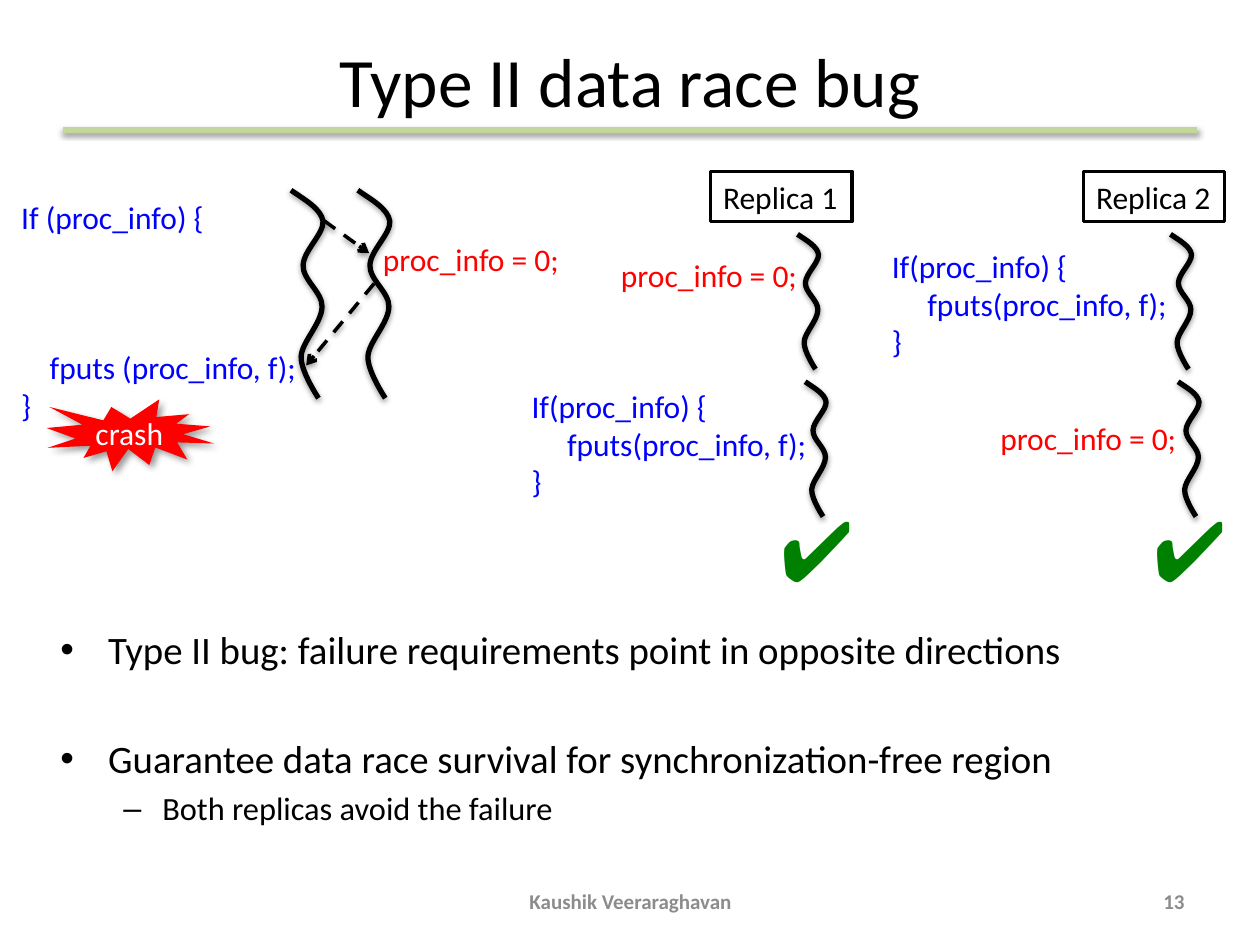
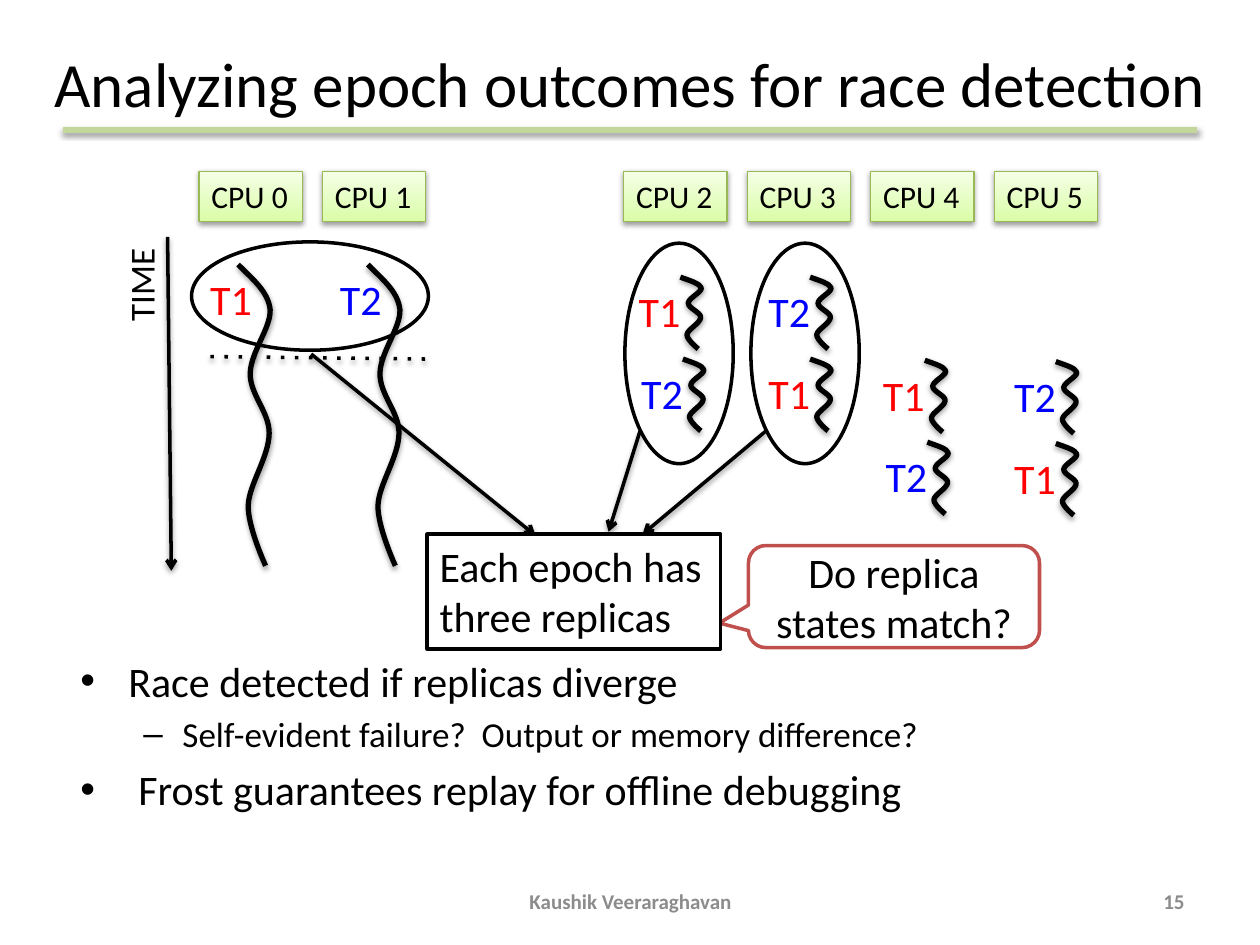
from lxml import etree
from pptx import Presentation
from pptx.dml.color import RGBColor
from pptx.enum import shapes, text
from pptx.oxml import ns
from pptx.util import Inches, Pt

COLORS = {
    "ink": "000000", "paper": "FFFFFF", "rule": "C3D69B", "footer": "8C8C8C",
    "red": "FF0000", "blue": "0000FF", "tick": "008000", "callout": "C0504D",
    "cpu_low": "DAFDA7", "cpu_high": "F5FFE7", "cpu_line": "98B955",
}
SOFT = {"alpha": 38, "blur": 3.1, "dist": 1.6, "angle": 90}
CRASH = {"alpha": 40, "blur": 4, "dist": 3, "angle": 45}
LABEL = {"word_wrap": False, "auto_size": text.MSO_AUTO_SIZE.SHAPE_TO_FIT_TEXT}
CENTERED = {"vertical_anchor": text.MSO_ANCHOR.MIDDLE, "word_wrap": True}
TOP = {"vertical_anchor": text.MSO_ANCHOR.TOP, "word_wrap": True}
LEFT, CENTER, RIGHT = text.PP_ALIGN.LEFT, text.PP_ALIGN.CENTER, text.PP_ALIGN.RIGHT
BULLETS = {0: ("•", 0.38, 0.38), 1: ("–", 0.81, 0.31)}
ASSIGNMENT = ["proc_info = 0;"]
GUARDED_CALL = ["If(proc_info) {", "     fputs(proc_info, f);", "}"]
WAVE = [
    (0.46, 0.05), (0.92, 0.09), (0.98, 0.15),
    (1, 0.21), (0.39, 0.29), (0.37, 0.36),
    (0.35, 0.43), (0.96, 0.49), (0.95, 0.56),
    (0.94, 0.64), (0.33, 0.73), (0.31, 0.8),
    (0.29, 0.87), (0.84, 1), (0.84, 1),
]


def rgb(name):
    return RGBColor.from_string(COLORS[name])


def apply(target, values):
    for name, value in values.items():
        setattr(target, name, value)


def box(left, top, width, height):
    return [Inches(side) for side in (left, top, width, height)]


def add_element(parent, tag, **attributes):
    element = etree.SubElement(parent, ns.qn(tag))
    for name, value in attributes.items():
        element.set(name, str(value))
    return element


def set_shadow(shape, shadow):
    properties = shape._element.spPr
    for old in properties.findall(ns.qn("a:effectLst")):
        properties.remove(old)
    effects = add_element(properties, "a:effectLst")
    if shadow:
        outer = add_element(
            effects, "a:outerShdw", blurRad=int(Pt(shadow["blur"])),
            dist=int(Pt(shadow["dist"])), dir=shadow["angle"] * 60000, rotWithShape=0)
        tint = add_element(outer, "a:srgbClr", val=COLORS["ink"])
        add_element(tint, "a:alpha", val=shadow["alpha"] * 1000)


def set_line(shape, color, width):
    shape.line.color.rgb = rgb(color)
    shape.line.width = Pt(width)


def write(frame, lines, size, color, align=LEFT, bold=False, font="Calibri", layout=LABEL):
    apply(frame, layout)
    for index, line in enumerate(lines):
        paragraph = frame.add_paragraph() if index else frame.paragraphs[0]
        paragraph.alignment = align
        run = paragraph.add_run()
        run.text = line
        apply(run.font, {"name": font, "size": Pt(size), "bold": bold})
        run.font.color.rgb = rgb(color)


def add_text(slide, place, lines, size, color, **options):
    label = slide.shapes.add_textbox(*box(*place))
    write(label.text_frame, lines, size, color, **options)
    return label


def add_shape(slide, kind, place, fill=None, line=None, width=2, shadow=None):
    shape = slide.shapes.add_shape(kind, *box(*place))
    if fill:
        shape.fill.solid()
        shape.fill.fore_color.rgb = rgb(fill)
    else:
        shape.fill.background()
    if line:
        set_line(shape, line, width)
    else:
        shape.line.fill.background()
    set_shadow(shape, shadow)
    return shape


def add_line(slide, start, end, color="ink", width=2, dash=None, arrow=False):
    ends = [Inches(value) for value in (*start, *end)]
    line = slide.shapes.add_connector(shapes.MSO_CONNECTOR.STRAIGHT, *ends)
    set_line(line, color, width)
    stroke = line.line._get_or_add_ln()
    if dash:
        add_element(stroke, "a:prstDash", val=dash)
    if arrow:
        add_element(stroke, "a:tailEnd", type="arrow")
    set_shadow(line, SOFT)


def bend_segments(freeform):
    outline = next(freeform._element.iter(ns.qn("a:path")))
    segments = outline.findall(ns.qn("a:lnTo"))
    for first in range(0, len(segments), 3):
        curve = add_element(outline, "a:cubicBezTo")
        for segment in segments[first:first + 3]:
            curve.append(segment[0])
            outline.remove(segment)


def add_wave(slide, left, top, width, height):
    builder = slide.shapes.build_freeform(Inches(left), Inches(top))
    builder.add_line_segments(
        [(Inches(left + x * width), Inches(top + y * height)) for x, y in WAVE], close=False)
    wave = builder.convert_to_shape()
    bend_segments(wave)
    wave.fill.background()
    set_line(wave, "ink", 3)
    set_shadow(wave, SOFT)


def add_bullets(slide, place, items):
    body = slide.shapes.add_textbox(*box(*place)).text_frame
    body.word_wrap = True
    for index, (level, line, size, before, extra) in enumerate(items):
        paragraph = body.add_paragraph() if index else body.paragraphs[0]
        mark, margin, hanging = BULLETS[level]
        properties = paragraph._p.get_or_add_pPr()
        properties.set("marL", str(Inches(margin + extra)))
        properties.set("indent", str(-Inches(hanging + extra)))
        add_element(properties, "a:buFont", typeface="Arial")
        add_element(properties, "a:buChar", char=mark)
        apply(paragraph, {"level": level, "space_before": Pt(before)})
        run = paragraph.add_run()
        run.text = line
        apply(run.font, {"name": "Calibri", "size": Pt(size)})
        run.font.color.rgb = rgb("ink")


def add_frame(deck, title, size, height, number):
    slide = deck.slides.add_slide(deck.slide_layouts[6])
    add_line(slide, (0.5, 1.03), (9.5, 1.03), color="rule", width=3.5)
    add_text(slide, (0, 0.3, 10, height), [title], size, "ink", align=CENTER, layout=CENTERED)
    for place, line, align in (((3.42, 6.95, 3.17, 0.4), "Kaushik Veeraraghavan", CENTER),
                               ((7.17, 6.95, 2.33, 0.4), number, RIGHT)):
        add_text(slide, place, [line], 12, "footer", align=align, bold=True, layout=CENTERED)
    return slide


def add_assignment(slide, left, top):
    add_text(slide, (left, top, 1.61, 0.4), ASSIGNMENT, 18, "red")


def add_replica(slide, name, left, assignment_at, call_at):
    add_assignment(slide, *assignment_at)
    add_text(slide, (*call_at, 2.41, 1.01), GUARDED_CALL, 18, "blue")
    header = add_shape(slide, shapes.MSO_SHAPE.RECTANGLE, (left, 1.36, 1.12, 0.4), "paper", "ink")
    write(header.text_frame, [name], 18, "ink")
    add_wave(slide, left + 0.69, 1.86, 0.17, 1.07)
    add_wave(slide, left + 0.75, 3.03, 0.17, 1.07)
    add_text(slide, (left + 0.46, 3.9, 0.77, 0.91), ["✔"], 48, "tick", font="Arial")


def add_cpu(slide, number, left):
    cpu = add_shape(slide, shapes.MSO_SHAPE.RECTANGLE, (left, 1.36, 0.82, 0.4),
                    "cpu_high", "cpu_line", 0.75, SOFT)
    cpu.fill.gradient()
    cpu.fill.gradient_angle = 90
    for stop, color in zip(cpu.fill.gradient_stops, ("cpu_low", "cpu_high")):
        stop.color.rgb = rgb(color)
    write(cpu.text_frame, [f"CPU {number}"], 18, "ink", layout=TOP)


def add_thread(slide, name, left, top, wave=(0.43, 0.17, 0.57)):
    offset, width, height = wave
    color = {"T1": "red", "T2": "blue"}[name]
    add_text(slide, (left, top, 0.54, 0.5), [name], 24, color)
    add_wave(slide, left + offset, top - 0.02, width, height)


def build_race_bug(deck):
    slide = add_frame(deck, "Type II data race bug", 39.6, 0.66, "13")
    add_bullets(slide, (0.38, 4.92, 9.62, 1.57), [
        (0, "Type II bug: failure requirements point in opposite directions", 22.2, 0, 0),
        (0, "Guarantee data race survival for synchronization-free region", 22.2, 35.5, 0),
        (1, "Both replicas avoid the failure", 18.5, 4, 0),
    ])
    add_assignment(slide, 2.94, 1.86)
    crash = add_shape(slide, shapes.MSO_SHAPE.EXPLOSION1, (0.37, 3.17, 1.33, 0.57),
                      "red", shadow=CRASH)
    write(crash.text_frame, ["crash"], 18, "paper", align=CENTER,
          layout={**CENTERED, "word_wrap": False})
    failing_code = add_text(slide, (0.07, 1.52, 2.41, 1.92),
                            ["If (proc_info) {", "    fputs (proc_info, f);", "}"], 18, "blue")
    failing_code.text_frame.paragraphs[1].space_before = Pt(64.5)
    for left in (2.31, 2.84):
        add_wave(slide, left, 1.51, 0.26, 1.65)
    for start, end in (((2.57, 1.75), (2.93, 2.01)), ((2.97, 2.25), (2.43, 2.9))):
        add_line(slide, start, end, dash="dash", arrow=True)
    add_replica(slide, "Replica 2", 8.6, (7.84, 3.28), (6.98, 1.91))
    add_replica(slide, "Replica 1", 5.64, (4.83, 1.98), (4.12, 3.02))


def build_epoch_outcomes(deck):
    slide = add_frame(deck, "Analyzing epoch outcomes for race detection", 36, 0.71, "15")
    for number in range(6):
        gap = 1.41 if number > 1 else 0
        add_cpu(slide, number, 1.58 + 0.98 * number + gap)
    add_bullets(slide, (0.54, 5.15, 8.83, 1.47), [
        (0, "Race detected if replicas diverge", 24, 0, 0),
        (1, "Self-evident failure?  Output or memory difference?", 20, 4, 0),
        (0, "Frost guarantees replay for offline debugging", 24, 5.3, 0.08),
    ])
    for upper, lower, left, top, shift in (
            ("T1", "T2", 4.97, 2.22, 0.02), ("T2", "T1", 6, 2.22, 0),
            ("T1", "T2", 6.91, 2.88, 0.02), ("T2", "T1", 7.95, 2.89, 0)):
        add_thread(slide, upper, left, top)
        add_thread(slide, lower, left + shift, top + 0.65)
    add_line(slide, (1.33, 1.88), (1.36, 4.53), arrow=True)
    time = add_text(slide, (0.9, 1.96, 0.54, 0.69), ["TIME"], 20, "ink")
    time.text_frame._txBody.bodyPr.set("vert", "vert270")
    for name, left in (("T1", 1.57), ("T2", 2.6)):
        add_thread(slide, name, left, 2.12, wave=(0.32, 0.26, 2.39))
    add_line(slide, (1.67, 2.83), (3.43, 2.85), dash="dot")
    for place in ((4.96, 1.93, 0.86, 1.75), (5.96, 1.93, 0.86, 1.75), (1.52, 1.92, 1.88, 0.86)):
        add_shape(slide, shapes.MSO_SHAPE.OVAL, place, line="ink")
    for start, end in (((2.47, 2.81), (4.25, 4.25)), ((5.08, 3.42), (4.83, 4.22)),
                       ((6.08, 3.42), (5.1, 4.24))):
        add_line(slide, start, end, arrow=True)
    question = add_shape(slide, shapes.MSO_SHAPE.ROUNDED_RECTANGULAR_CALLOUT,
                         (5.94, 4.33, 2.31, 0.81), "paper", "callout")
    for index, value in enumerate((-0.6, 0.26, 0.17)):
        question.adjustments[index] = value
    write(question.text_frame, ["Do replica states match?"], 24, "ink",
          align=CENTER, layout=CENTERED)
    summary = add_shape(slide, shapes.MSO_SHAPE.RECTANGLE, (3.39, 4.24, 2.33, 0.91),
                        "paper", "ink")
    write(summary.text_frame, ["Each epoch has three replicas"], 24, "ink", layout=TOP)


def main():
    deck = Presentation()
    apply(deck, {"slide_width": Inches(10), "slide_height": Inches(7.5)})
    build_race_bug(deck)
    build_epoch_outcomes(deck)
    deck.save("out.pptx")


if __name__ == "__main__":
    main()
